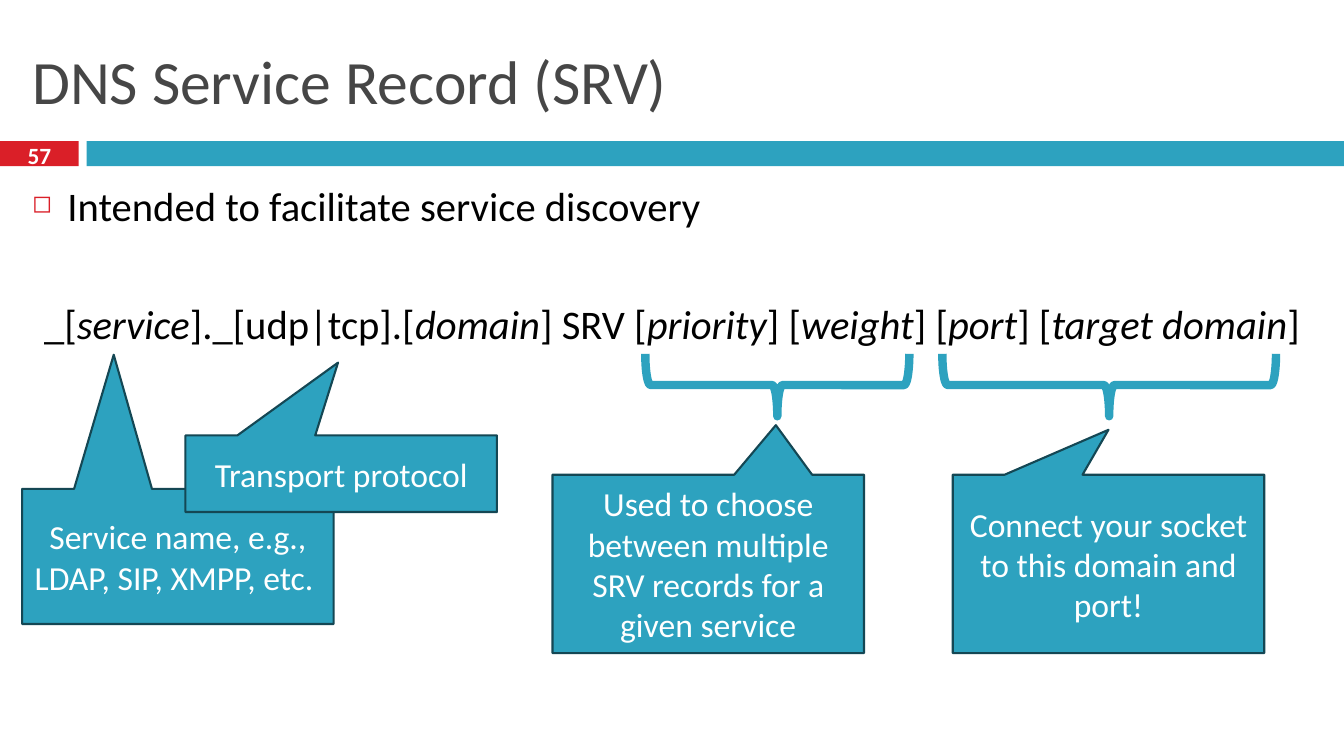
from typing import NamedTuple

from lxml.etree import SubElement as add_element
from pptx import Presentation
from pptx.dml.color import RGBColor
from pptx.enum.shapes import MSO_SHAPE as Preset
from pptx.enum.text import MSO_ANCHOR as Anchor, MSO_AUTO_SIZE as AutoSize, PP_ALIGN as Align
from pptx.oxml.ns import qn
from pptx.util import Inches, Pt

WIDTH, HEIGHT = Inches(13.33), Inches(7.5)
FONT = "Calibri"
TEAL, RED, EDGE, GREY = "2DA2BF", "DA1F28", "144754", "464646"
WHITE, BLACK = "FFFFFF", "000000"


class Area(NamedTuple):
    """Left and width in percent of slide width, top and height of slide height."""
    left: float
    top: float
    width: float
    height: float

    def lengths(self) -> tuple[int, ...]:
        sides = (WIDTH, HEIGHT, WIDTH, HEIGHT)
        return tuple(round(share * side / 100) for share, side in zip(self, sides))


class Callout(NamedTuple):
    text: str
    left: float
    top: float
    height: float
    tip: tuple[float, float]


class Brace(NamedTuple):
    left: float
    width: float


CALLOUT_WIDTH = 23.18
BRACE_TOP, BRACE_HEIGHT = 46.8, 8.27
BAND_TOP, BAND_HEIGHT, NUMBER_WIDTH, BAND_LEFT = 18.67, 3.33, 5.85, 6.45

CALLOUTS = [
    Callout("Service name, e.g., LDAP, SIP, XMPP, etc. ", 1.65, 64.67, 17.87, (-0.206, -1.493)),
    Callout("Transport protocol", 13.8, 57.6, 10.13, (-0.01, -1.451)),
    Callout("Used to choose between multiple SRV records for a given service",
            41.11, 62.8, 23.6, (0.217, -0.778)),
    Callout("Connect your socket to this domain and port!", 70.89, 62.8, 23.6, (0, -0.752)),
]
BRACES = [Brace(48.01, 19.65), Brace(70.11, 24.83)]

# Every second piece of the record is an italic field name
RECORD = ["_[", "service", "]._[udp|tcp].[", "domain", "] SRV [", "priority", "] [",
          "weight", "] [", "port", "] [", "target domain", "]"]


def color(code: str) -> RGBColor:
    return RGBColor.from_string(code)


def add_span(para, text: str, size: float, code: str, bold=False, italic=False) -> None:
    span = para.add_run()
    span.text = text
    font = span.font
    font.name, font.size, font.bold, font.italic = FONT, Pt(size), bold, italic
    font.color.rgb = color(code)


def set_frame(shape, anchor, align):
    """Prepare the text frame and return its first paragraph."""
    frame = shape.text_frame
    frame.word_wrap, frame.auto_size = True, AutoSize.NONE
    frame.vertical_anchor = anchor
    para = frame.paragraphs[0]
    para.alignment = align
    return para


def add_bullet(para) -> None:
    props = para._p.get_or_add_pPr()
    props.set("marL", str(Inches(0.35)))
    props.set("indent", str(-Inches(0.35)))
    tint = add_element(props, qn("a:buClr"))
    add_element(tint, qn("a:srgbClr"), val=RED)
    add_element(props, qn("a:buSzPct"), val="60000")
    add_element(props, qn("a:buChar"), char="◻")


def draw_band(page, left: float, width: float, code: str) -> None:
    band = page.shapes.add_shape(
        Preset.RECTANGLE, *Area(left, BAND_TOP, width, BAND_HEIGHT).lengths())
    band.shadow.inherit = False
    band.fill.solid()
    band.fill.fore_color.rgb = color(code)
    band.line.fill.background()


def draw_callout(page, item: Callout) -> None:
    area = Area(item.left, item.top, CALLOUT_WIDTH, item.height)
    box = page.shapes.add_shape(Preset.RECTANGULAR_CALLOUT, *area.lengths())
    box.shadow.inherit = False
    box.adjustments[0], box.adjustments[1] = item.tip
    box.fill.solid()
    box.fill.fore_color.rgb = color(TEAL)
    box.line.color.rgb = color(EDGE)
    box.line.width = Pt(1.5)
    add_span(set_frame(box, Anchor.MIDDLE, Align.CENTER), item.text, 24, WHITE)


def draw_brace(page, item: Brace) -> None:
    """Turn a right brace about its centre so that it points down."""
    left, top, width, height = Area(item.left, BRACE_TOP, item.width, BRACE_HEIGHT).lengths()
    shift = (width - height) // 2
    brace = page.shapes.add_shape(
        Preset.RIGHT_BRACE, left + shift, top - shift, height, width)
    brace.rotation = 90
    brace.shadow.inherit = False
    brace.fill.background()
    brace.line.color.rgb = color(TEAL)
    brace.line.width = Pt(6)


def draw_header(page) -> None:
    draw_band(page, 0, NUMBER_WIDTH, RED)
    draw_band(page, BAND_LEFT, 100 - BAND_LEFT, TEAL)

    title = page.shapes.title
    title.left, title.top, title.width, title.height = Area(1.65, 3.33, 96.7, 14.4).lengths()
    para = set_frame(title, Anchor.MIDDLE, Align.LEFT)
    add_span(para, "DNS Service Record (SRV)", 44, GREY)

    number = page.shapes.add_textbox(*Area(0, 18.27, NUMBER_WIDTH, 4.4).lengths())
    add_span(set_frame(number, Anchor.MIDDLE, Align.CENTER), "57", 16.6, WHITE, bold=True)


def draw_body(page) -> None:
    body = page.shapes.add_textbox(*Area(1.65, 23.33, 96.7, 74.4).lengths())
    para = set_frame(body, Anchor.TOP, Align.LEFT)
    para.space_before = Pt(7)
    add_bullet(para)
    add_span(para, "Intended to facilitate service discovery", 29, BLACK)

    record = body.text_frame.add_paragraph()
    record.alignment = Align.CENTER
    record.space_before = Pt(49)
    for index, piece in enumerate(RECORD):
        add_span(record, piece, 29, BLACK, italic=index % 2 == 1)


def main() -> None:
    deck = Presentation()
    deck.slide_width, deck.slide_height = WIDTH, HEIGHT
    page = deck.slides.add_slide(deck.slide_layouts[5])

    # Header and text
    draw_header(page)
    draw_body(page)

    # Explanations of the record's fields
    for callout in CALLOUTS:
        draw_callout(page, callout)
    for brace in BRACES:
        draw_brace(page, brace)

    deck.save("out.pptx")


if __name__ == "__main__":
    main()
